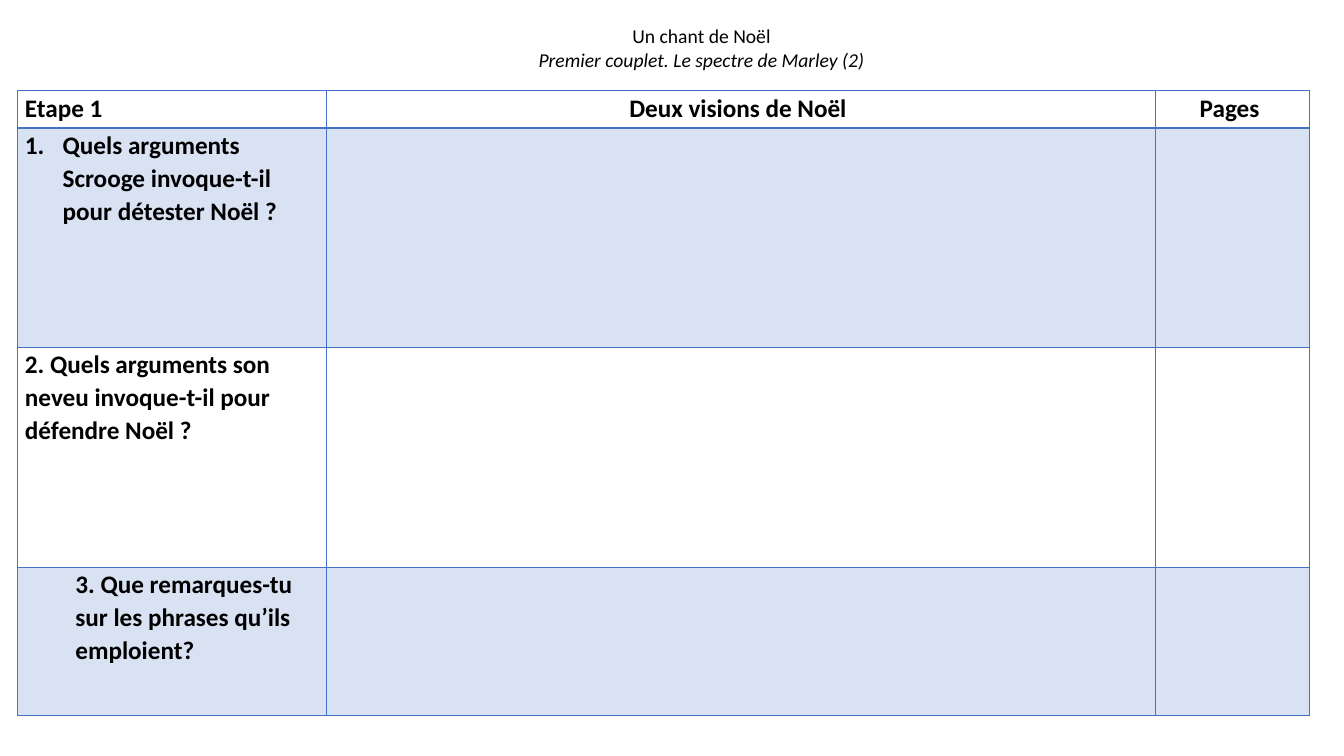
from dataclasses import dataclass

from lxml.etree import SubElement
from pptx import Presentation
from pptx.dml.color import RGBColor
from pptx.enum.text import MSO_ANCHOR, MSO_AUTO_SIZE, PP_ALIGN
from pptx.oxml.ns import qn
from pptx.slide import Slide
from pptx.table import _Cell
from pptx.text.text import _Paragraph
from pptx.util import Cm, Pt


@dataclass(frozen=True)
class Theme:
    font: str = "Calibri"
    ink: RGBColor = RGBColor(0x00, 0x00, 0x00)
    accent: RGBColor = RGBColor(0x44, 0x72, 0xC4)
    band_opacity: int = 20
    title_size: Pt = Pt(14)
    table_size: Pt = Pt(18)
    line_spacing: float = 1.07
    border: Pt = Pt(1)
    header_border: Pt = Pt(2)


@dataclass(frozen=True)
class Heading:
    text: str
    width: Cm
    align: PP_ALIGN = PP_ALIGN.CENTER


@dataclass(frozen=True)
class Question:
    text: str
    height: Cm
    indent: Cm = Cm(0)
    numbered: bool = False


THEME = Theme()
HEADER_HEIGHT = Cm(0.94)
CELL_MARGIN = Cm(0.19)
HEADINGS = [
    Heading("Etape 1", Cm(7.78), PP_ALIGN.LEFT),
    Heading("Deux visions de Noël ", Cm(20.9)),
    Heading("Pages ", Cm(3.88)),
]
QUESTIONS = [
    Question("Quels arguments Scrooge invoque-t-il pour détester Noël ?",
             Cm(5.53), Cm(0.95), numbered=True),
    Question("2. Quels arguments son neveu invoque-t-il pour défendre Noël ?", Cm(5.53)),
    Question("3. Que remarques-tu sur les phrases qu’ils emploient?", Cm(3.73), Cm(1.27)),
]


def style_runs(paragraph: _Paragraph, size: Pt, bold: bool, italic: bool = False) -> None:
    for run in paragraph.runs:
        run.font.name = THEME.font
        run.font.size = size
        run.font.bold = bold
        run.font.italic = italic
        run.font.color.rgb = THEME.ink


def add_title(slide: Slide) -> None:
    title = slide.shapes.title
    title.left, title.top, title.width, title.height = Cm(13.28), Cm(0.48), Cm(8.8), Cm(1.45)
    frame = title.text_frame
    frame.text = "Un chant de Noël\nPremier couplet. Le spectre de Marley (2)"
    frame.word_wrap = False
    frame.auto_size = MSO_AUTO_SIZE.NONE
    frame.vertical_anchor = MSO_ANCHOR.MIDDLE
    for index, paragraph in enumerate(frame.paragraphs):
        paragraph.alignment = PP_ALIGN.CENTER
        style_runs(paragraph, THEME.title_size, bold=False, italic=index == 1)


def draw_borders(cell: _Cell, top: Pt, bottom: Pt) -> None:
    widths = {"a:lnL": THEME.border, "a:lnR": THEME.border, "a:lnT": top, "a:lnB": bottom}
    properties = cell._tc.get_or_add_tcPr()
    for side, width in widths.items():
        line = SubElement(properties, qn(side), w=str(int(width)))
        fill = SubElement(line, qn("a:solidFill"))
        SubElement(fill, qn("a:srgbClr"), val=str(THEME.accent))


def fill_cell(cell: _Cell, shaded: bool) -> None:
    """Tint a shaded cell with the translucent accent, and leave others clear."""
    if not shaded:
        cell.fill.background()
        return
    cell.fill.solid()
    cell.fill.fore_color.rgb = THEME.accent
    color = cell._tc.tcPr.find(qn("a:solidFill")).find(qn("a:srgbClr"))
    SubElement(color, qn("a:alpha"), val=str(THEME.band_opacity * 1000))


def write_cell(cell: _Cell, text: str, align: PP_ALIGN = PP_ALIGN.LEFT) -> _Paragraph:
    cell.text_frame.text = text
    paragraph = cell.text_frame.paragraphs[0]
    paragraph.alignment = align
    paragraph.line_spacing = THEME.line_spacing
    style_runs(paragraph, THEME.table_size, bold=True)
    return paragraph


def indent_question(paragraph: _Paragraph, question: Question) -> None:
    properties = paragraph._p.get_or_add_pPr()
    properties.set("marL", str(int(question.indent)))
    properties.set("indent", str(-int(question.indent) if question.numbered else 0))
    if question.numbered:
        SubElement(properties, qn("a:buFont"), typeface="+mj-lt")
        SubElement(properties, qn("a:buAutoNum"), type="arabicPeriod")


def add_worksheet(slide: Slide) -> None:
    heights = [HEADER_HEIGHT] + [question.height for question in QUESTIONS]
    widths = [heading.width for heading in HEADINGS]
    worksheet = slide.shapes.add_table(
        len(heights), len(widths), Cm(0.44), Cm(2.29), sum(widths), sum(heights)).table
    worksheet.first_row = worksheet.horz_banding = False
    for column, width in zip(worksheet.columns, widths):
        column.width = width

    for index, (row, height) in enumerate(zip(worksheet.rows, heights)):
        row.height = height
        for cell in row.cells:
            cell.margin_left = cell.margin_right = CELL_MARGIN
            cell.margin_top = cell.margin_bottom = Cm(0)
            draw_borders(cell,
                         top=THEME.header_border if index == 1 else THEME.border,
                         bottom=THEME.header_border if index == 0 else THEME.border)
            fill_cell(cell, shaded=index % 2 == 1)

    for column, heading in enumerate(HEADINGS):
        write_cell(worksheet.cell(0, column), heading.text, heading.align)
    for index, question in enumerate(QUESTIONS, start=1):
        indent_question(write_cell(worksheet.cell(index, 0), question.text), question)


def main() -> None:
    presentation = Presentation()
    presentation.slide_width, presentation.slide_height = Cm(33.87), Cm(19.05)
    slide = presentation.slides.add_slide(presentation.slide_layouts.get_by_name("Title Only"))
    add_title(slide)
    add_worksheet(slide)
    presentation.save("out.pptx")


if __name__ == "__main__":
    main()
